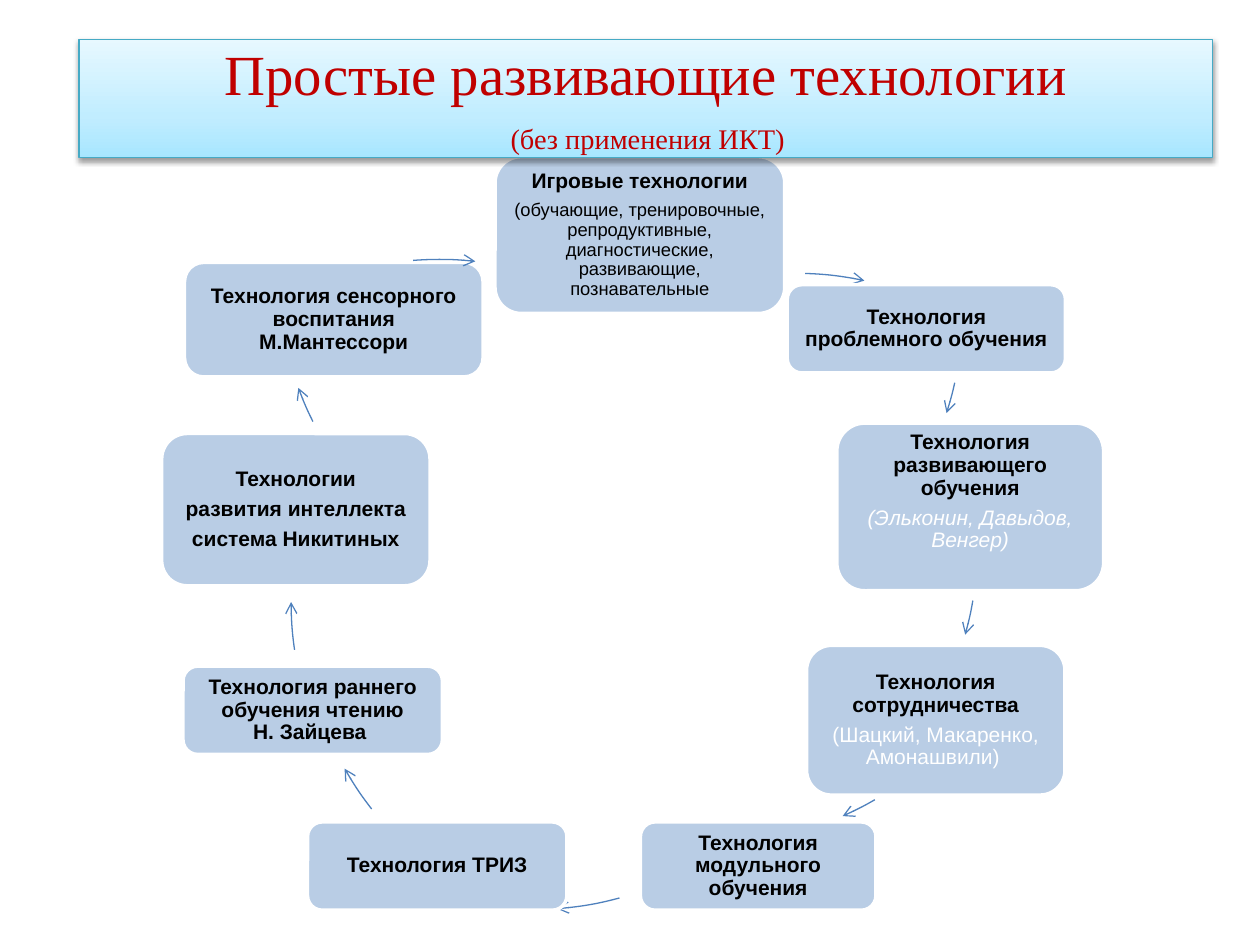
from copy import deepcopy
from math import cos, radians, sin

from lxml.etree import SubElement as Sub
from pptx import Presentation
from pptx.dml.color import RGBColor as Rgb
from pptx.enum.shapes import MSO_SHAPE as Kind
from pptx.enum.text import MSO_ANCHOR as Anchor, MSO_AUTO_SIZE as Auto, PP_ALIGN as Align
from pptx.oxml.ns import qn
from pptx.util import Cm, Pt

HEX = {
    "box": "B9CDE5", "white": "FFFFFF", "black": "000000", "arrow": "4F81BD",
    "title": "C00000", "edge": "46AAC5",
    "low": "A7E6FF", "mid": "C1EDFF", "high": "E7F8FF",
}
SIDE = 13.69  # cm, diameter of the circle behind every arrow

# place, bold lines, note (text, size, colour, italic), extra bottom inset
BOXES = [
    ((9.98, 3.16, 5.84, 3.16), ["Игровые технологии"],
     ("(обучающие, тренировочные, репродуктивные, диагностические, "
      "развивающие, познавательные", 10.5, "black", False), 0),
    ((15.87, 5.74, 5.61, 1.78), ["Технология проблемного обучения"], None, 0),
    ((16.87, 8.53, 5.38, 3.38), ["Технология развивающего обучения"],
     ("(Эльконин, Давыдов, Венгер)", 12, "white", True), 0.6),
    ((16.26, 13.01, 5.21, 3.02), ["Технология сотрудничества"],
     ("(Шацкий, Макаренко, Амонашвили) ", 12, "white", False), 0),
    ((12.91, 16.57, 4.75, 1.78), ["Технология модульного обучения"], None, 0),
    ((6.2, 16.57, 5.23, 1.78), ["Технология ТРИЗ"], None, 0),
    ((3.69, 13.43, 5.23, 1.78),
     ["Технология раннего обучения чтению\vН. Зайцева "], None, 0),
    ((3.26, 8.74, 5.41, 3.07),
     ["Технологии", "развития интеллекта", "система Никитиных"], None, 0),
    ((3.72, 5.29, 6.02, 2.31),
     ["Технология сенсорного воспитания М.Мантессори"], None, 0),
]

# circle's left and top, then start and end angle, for the arrow after each box
ARROWS = [
    (9.17, 5.51, 271.8, 281.9),
    (5.72, -0.61, 12.5, 17.8),
    (6.02, 4.11, 9.7, 15.6),
    (7.37, 3.35, 60, 66.1),
    (3.86, 4.65, 74.9, 85.6),
    (6.05, 5.26, 142.1, 150.3),
    (5.87, 5.28, 171.8, 179.9),
    (5.59, -1.4, 153.5, 159.7),
    (2.01, 5.23, 265.6, 276.1),
]


def rgb(name):
    return Rgb.from_string(HEX[name])


def style(run, size, color, face="Arial", bold=False, italic=False):
    font = run.font
    font.name, font.size = face, Pt(size)
    font.bold, font.italic = bold, italic
    font.color.rgb = rgb(color)


def add_box(slide, place, heads, note, extra):
    box = slide.shapes.add_shape(Kind.ROUNDED_RECTANGLE, *map(Cm, place))
    box.shadow.inherit = False
    box.fill.solid()
    box.fill.fore_color.rgb = rgb("box")
    box.line.color.rgb = rgb("white")
    box.line.width = Pt(2)

    frame = box.text_frame
    frame.word_wrap = True
    frame.vertical_anchor = Anchor.MIDDLE
    frame.margin_left = frame.margin_right = frame.margin_top = Cm(0.13)
    frame.margin_bottom = Cm(0.13 + extra)
    lines = [(head, 12, "black", False) for head in heads]
    if note:
        lines.append(note)
    frame.text = "\n".join(line[0] for line in lines)
    for i, (para, line) in enumerate(zip(frame.paragraphs, lines)):
        para.alignment = Align.CENTER
        para.line_spacing = 0.9
        para.space_after = Pt(4.2)
        for run in para.runs:
            style(run, line[1], line[2], bold=i < len(heads), italic=line[3])


def add_arc(slide, left, top, start, end):
    """Clockwise arc of the circle that fills the shape's square."""
    form = slide.shapes.build_freeform(Cm(left), Cm(top))
    form.add_line_segments([(Cm(left + SIDE), Cm(top + SIDE))], close=False)
    arc = form.convert_to_shape()

    # Trade the diagonal for an arc
    track = arc._element.find(".//" + qn("a:path"))
    for step in list(track):
        track.remove(step)
    half, turn = SIDE / 2, radians(start)
    move = Sub(track, qn("a:moveTo"))
    Sub(move, qn("a:pt"), x=str(Cm(half + half * cos(turn))),
        y=str(Cm(half + half * sin(turn))))
    Sub(track, qn("a:arcTo"), wR=str(Cm(half)), hR=str(Cm(half)),
        stAng=str(round(start * 60000)), swAng=str(round((end - start) * 60000)))

    arc.shadow.inherit = False
    arc.fill.background()
    arc.line.color.rgb = rgb("arrow")
    arc.line.width = Pt(0.75)
    Sub(arc.line._get_or_add_ln(), qn("a:tailEnd"), type="arrow")


def add_shade(shape):
    effects = Sub(shape._element.spPr, qn("a:effectLst"))
    shade = Sub(effects, qn("a:outerShdw"), blurRad=str(Pt(3.1)),
                dist=str(Pt(1.6)), dir="5400000", rotWithShape="0")
    color = Sub(shade, qn("a:srgbClr"), val=HEX["black"])
    Sub(color, qn("a:alpha"), val="38000")


def set_title(slide):
    title = slide.shapes.title
    title.left, title.top, title.width, title.height = map(Cm, (1.59, 0.79, 22.86, 2.39))

    # Gradient from bottom to top
    title.fill.gradient()
    title.fill.gradient_angle = 90
    first = title.fill._fill.gradient_stops[0]._gs
    first.addnext(deepcopy(first))
    shades = (("low", 0), ("mid", 0.35), ("high", 1))
    for stop, (name, place) in zip(title.fill.gradient_stops, shades):
        stop.color.rgb = rgb(name)
        stop.position = place
    title.line.color.rgb = rgb("edge")
    title.line.width = Pt(0.75)
    add_shade(title)

    # Heading and smaller second line
    frame = title.text_frame
    frame.auto_size = Auto.NONE
    frame.word_wrap = True
    frame.vertical_anchor = Anchor.MIDDLE
    para = frame.paragraphs[0]
    para.text = "Простые развивающие технологии\v "
    para.alignment = Align.CENTER
    para.add_run().text = "(без применения ИКТ) "
    for run, size in zip(para.runs, (32.4, 24.3, 16.2)):
        style(run, size, "title", face="Times New Roman")
    Sub(para._p.find(qn("a:br")), qn("a:rPr"), sz="3240")

    # The title lies above the first box
    slide.shapes._spTree.append(title._element)


def main():
    deck = Presentation()
    deck.slide_width, deck.slide_height = Cm(25.4), Cm(19.05)
    slide = deck.slides.add_slide(deck.slide_layouts[5])
    for box, arrow in zip(BOXES, ARROWS):
        add_box(slide, *box)
        add_arc(slide, *arrow)
    set_title(slide)
    deck.save("out.pptx")


if __name__ == "__main__":
    main()
